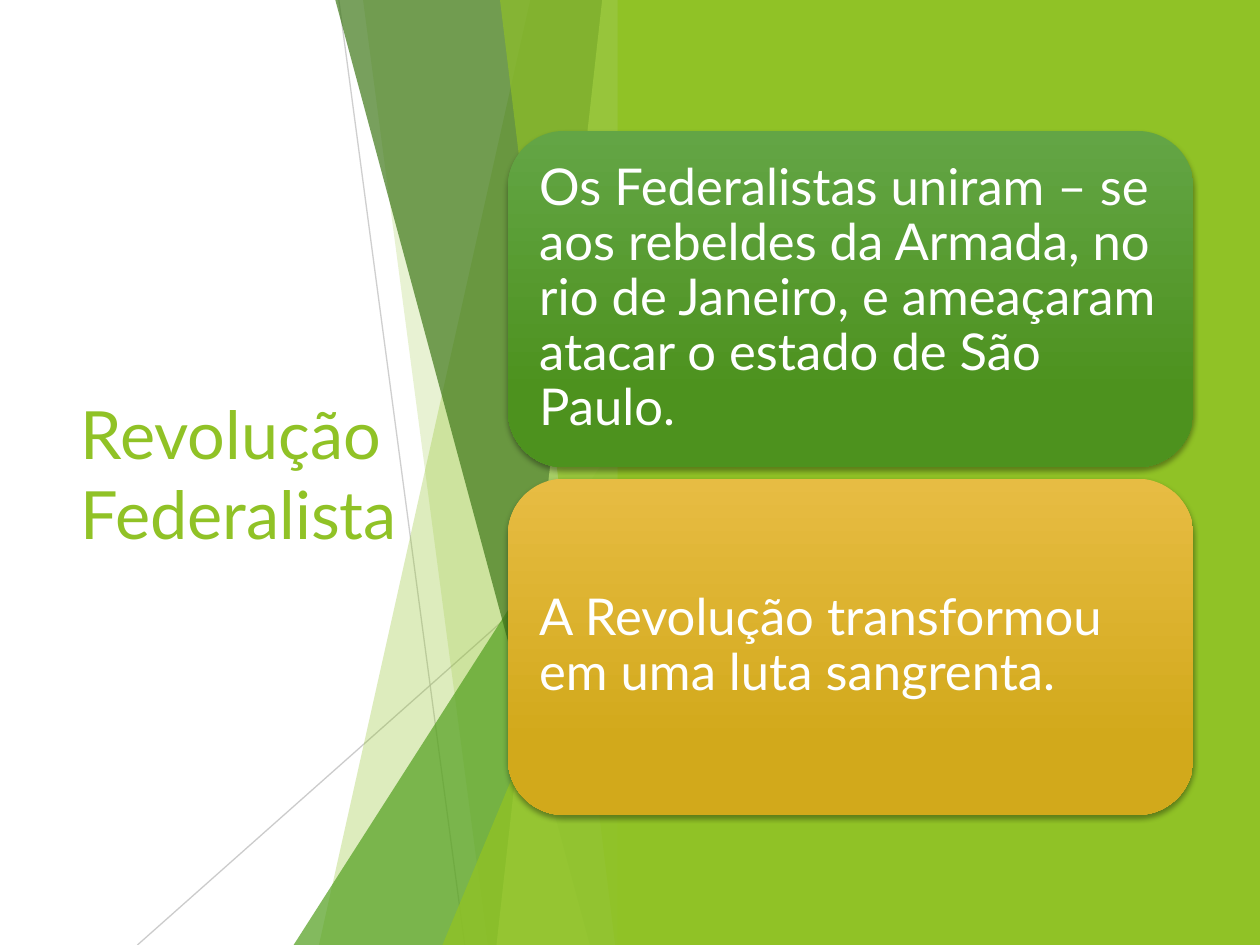
from dataclasses import dataclass

import pptx
import pptx.dml.color
import pptx.enum.dml
import pptx.enum.shapes
import pptx.enum.text
import pptx.oxml
import pptx.oxml.ns
import pptx.util
from pptx.dml.color import RGBColor
from pptx.util import Cm

LIME = RGBColor(0x90, 0xC2, 0x26)
GREEN = RGBColor(0x54, 0xA0, 0x21)
FOREST = RGBColor(0x3F, 0x78, 0x19)
PALE_LIME = RGBColor(0xC0, 0xE4, 0x74)
GREY = RGBColor(0xBF, 0xBF, 0xBF)
WHITE = RGBColor(0xFF, 0xFF, 0xFF)
CARD_GREEN = (RGBColor(0x63, 0xA5, 0x45), RGBColor(0x4D, 0x92, 0x1E))
CARD_GOLD = (RGBColor(0xE7, 0xBC, 0x43), RGBColor(0xD2, 0xA9, 0x1B))

FONT = "Lato"
WIDTH, HEIGHT = 25.4, 19.05
RAYS_RIGHT = WIDTH / 2
PANEL_LEFT = 12.45
CARD_LEFT, CARD_TOP, CARD_WIDTH, CARD_HEIGHT = 10.24, 2.64, 13.82, 6.78
CARD_GAP = 0.23
SHAPES = pptx.enum.shapes.MSO_SHAPE


@dataclass
class Thread:
    start: tuple[float, float]
    end: tuple[float, float]
    opacity: int


@dataclass
class Ray:
    top_x: float
    bottom_x: float
    color: RGBColor
    opacity: int


@dataclass
class Wedge:
    left: float
    top: float
    color: RGBColor
    opacity: int


@dataclass
class Card:
    text: str
    gradient: tuple[RGBColor, RGBColor]


THREADS = [
    Thread((6.83, 0), (9.37, HEIGHT), 75),
    Thread((RAYS_RIGHT, 10.24), (2.77, HEIGHT), 80),
]
FACETS = [
    Ray(10.69, 6.43, LIME, 30),
    Ray(7.32, 9.83, LIME, 20),
    Wedge(5.92, 8.46, GREEN, 72),
    Ray(6.76, 11.89, FOREST, 70),
    Ray(12.14, 10.01, PALE_LIME, 70),
    Ray(10.08, 12.4, LIME, 65),
    Wedge(8.92, 9.98, LIME, 80),
]
CARDS = [
    Card(
        "Os Federalistas uniram – se aos rebeldes da Armada, no rio de Janeiro, "
        "e ameaçaram atacar o estado de São Paulo.",
        CARD_GREEN,
    ),
    Card("A Revolução transformou em uma luta sangrenta.", CARD_GOLD),
]


def set_opacity(properties, percent: int) -> None:
    color = next(properties.iter(pptx.oxml.ns.qn("a:srgbClr")))
    alpha = pptx.oxml.parse_xml(
        f'<a:alpha {pptx.oxml.ns.nsdecls("a")} val="{percent * 1000}"/>'
    )
    color.append(alpha)


def paint(shape, color: RGBColor) -> None:
    shape.shadow.inherit = False
    shape.fill.solid()
    shape.fill.fore_color.rgb = color
    shape.line.fill.background()


def format_text(paragraph, size: float, color: RGBColor) -> None:
    paragraph.alignment = pptx.enum.text.PP_ALIGN.LEFT
    for run in paragraph.runs:
        run.font.name = FONT
        run.font.size = pptx.util.Pt(size)
        run.font.color.rgb = color


def draw_title(slide) -> None:
    title = slide.shapes.title
    title.left, title.top = Cm(1.37), Cm(3.84)
    title.width, title.height = Cm(7.39), Cm(11.38)
    frame = title.text_frame
    frame.text = "Revolução Federalista"
    frame.word_wrap = True
    frame.auto_size = pptx.enum.text.MSO_AUTO_SIZE.NONE
    frame.vertical_anchor = pptx.enum.text.MSO_ANCHOR.MIDDLE
    format_text(frame.paragraphs[0], 38, LIME)


def draw_thread(slide, thread: Thread) -> None:
    ends = [Cm(value) for value in (*thread.start, *thread.end)]
    line = slide.shapes.add_connector(
        pptx.enum.shapes.MSO_CONNECTOR.STRAIGHT, *ends
    )
    line.line.color.rgb = GREY
    line.line.width = pptx.util.Pt(0.75)
    properties = line._element.spPr
    set_opacity(properties, thread.opacity)
    properties.append(
        pptx.oxml.parse_xml(f'<a:effectLst {pptx.oxml.ns.nsdecls("a")}/>')
    )


def draw_facet(slide, facet: Ray | Wedge) -> None:
    if isinstance(facet, Wedge):
        shape = slide.shapes.add_shape(
            SHAPES.ISOSCELES_TRIANGLE,
            Cm(facet.left),
            Cm(facet.top),
            Cm(RAYS_RIGHT - facet.left),
            Cm(HEIGHT - facet.top),
        )
        shape.adjustments[0] = 1
    else:
        outline = slide.shapes.build_freeform(Cm(facet.top_x), 0)
        outline.add_line_segments(
            [
                (Cm(RAYS_RIGHT), 0),
                (Cm(RAYS_RIGHT), Cm(HEIGHT)),
                (Cm(facet.bottom_x), Cm(HEIGHT)),
            ]
        )
        shape = outline.convert_to_shape()
    paint(shape, facet.color)
    set_opacity(shape._element.spPr, facet.opacity)


def draw_card(slide, card: Card, top: float) -> None:
    shape = slide.shapes.add_shape(
        SHAPES.ROUNDED_RECTANGLE,
        Cm(CARD_LEFT), Cm(top), Cm(CARD_WIDTH), Cm(CARD_HEIGHT),
    )
    shape.fill.gradient()
    shape.fill.gradient_angle = 270
    for stop, color, position in zip(
        shape.fill.gradient_stops, card.gradient, (0, 0.78)
    ):
        stop.color.rgb = color
        stop.position = position
    shape.line.fill.background()
    shape._element.spPr.append(
        pptx.oxml.parse_xml(
            f'<a:effectLst {pptx.oxml.ns.nsdecls("a")}>'
            '<a:outerShdw blurRad="38100" dist="25400" dir="5400000" rotWithShape="0">'
            '<a:srgbClr val="000000"><a:alpha val="35000"/></a:srgbClr>'
            "</a:outerShdw></a:effectLst>"
        )
    )
    frame = shape.text_frame
    frame.text = card.text
    frame.word_wrap = True
    frame.vertical_anchor = pptx.enum.text.MSO_ANCHOR.MIDDLE
    frame.margin_left = frame.margin_right = Cm(0.3)
    frame.margin_top = frame.margin_bottom = Cm(0.3)
    paragraph = frame.paragraphs[0]
    paragraph.line_spacing = 0.9
    format_text(paragraph, 29, WHITE)


def main() -> None:
    presentation = pptx.Presentation()
    presentation.slide_width, presentation.slide_height = Cm(WIDTH), Cm(HEIGHT)
    slide = presentation.slides.add_slide(presentation.slide_layouts[5])
    slide.background.fill.solid()
    slide.background.fill.fore_color.rgb = WHITE
    draw_title(slide)
    for thread in THREADS:
        draw_thread(slide, thread)
    for facet in FACETS:
        draw_facet(slide, facet)
    panel = slide.shapes.add_shape(
        SHAPES.RECTANGLE, Cm(PANEL_LEFT), 0, Cm(WIDTH - PANEL_LEFT), Cm(HEIGHT)
    )
    paint(panel, LIME)
    for row, card in enumerate(CARDS):
        draw_card(slide, card, CARD_TOP + row * (CARD_HEIGHT + CARD_GAP))
    presentation.save("out.pptx")


if __name__ == "__main__":
    main()
